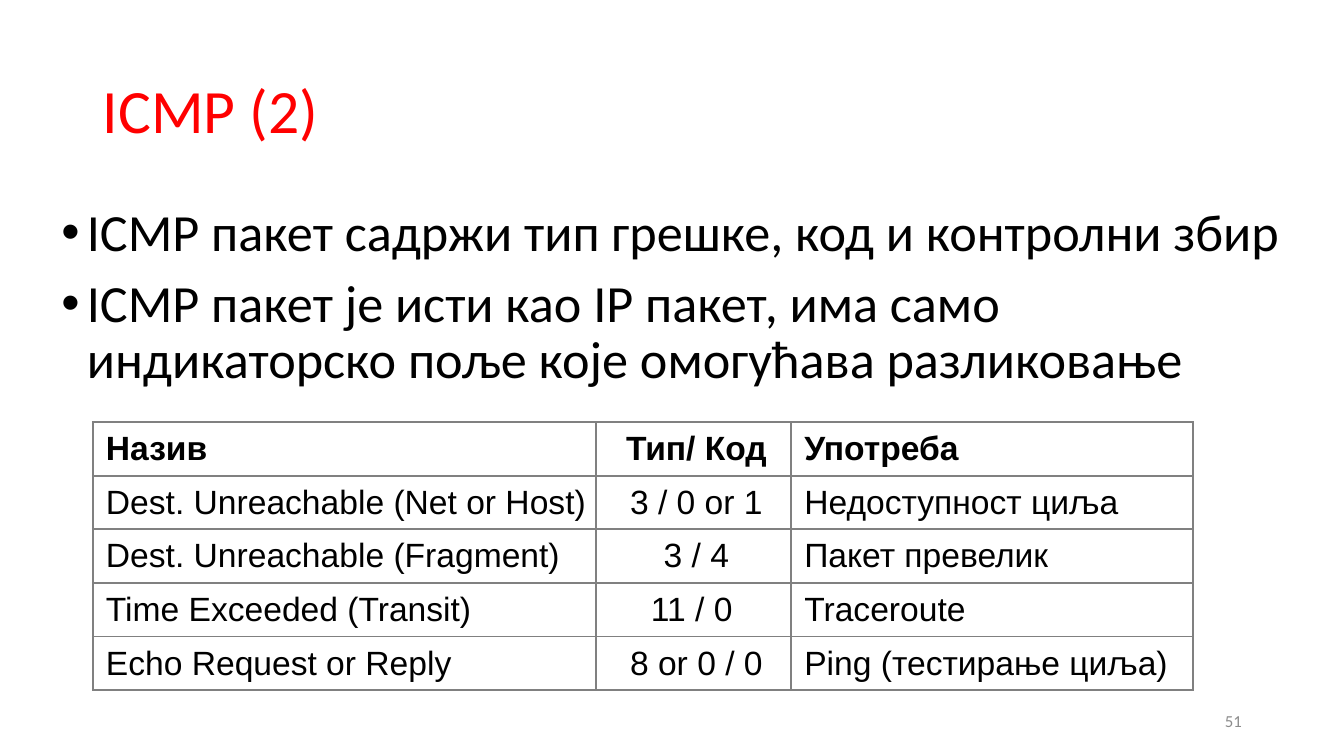
from lxml.etree import SubElement
from pptx import Presentation
from pptx.dml.color import RGBColor
from pptx.enum.text import MSO_ANCHOR, PP_ALIGN
from pptx.oxml.ns import qn
from pptx.util import Cm, Pt

COLORS = {"title": "FF0000", "text": "000000", "number": "8C8C8C", "border": "808080"}


class SlideBuilder:
    """Holds the text style and the current slide, and adds its elements."""

    heading_font = "Calibri"
    table_font = "Arial"
    border_width = Pt(1.5)
    cell_format = {
        "vertical_anchor": MSO_ANCHOR.MIDDLE,
        "margin_left": Cm(0.33),
        "margin_right": Cm(0.18),
        "margin_top": Cm(0.1),
        "margin_bottom": Cm(0.1),
    }

    def __init__(self, prs):
        self.slide = prs.slides.add_slide(prs.slide_layouts[6])

    def apply(self, target, values):
        for name, value in values.items():
            setattr(target, name, value)

    def add_text(self, p, text, size, color, font, bold=False, **layout):
        self.apply(p, layout)
        r = p.add_run()
        r.text = text
        self.apply(r.font, {"name": font, "size": Pt(size), "bold": bold})
        r.font.color.rgb = RGBColor.from_string(COLORS[color])

    def text_box(self, box, lines, size, color, anchor=MSO_ANCHOR.MIDDLE, bullet=None, **layout):
        tf = self.slide.shapes.add_textbox(*map(Cm, box)).text_frame
        self.apply(tf, {"word_wrap": True, "vertical_anchor": anchor})
        for i, line in enumerate(lines):
            p = tf.add_paragraph() if i else tf.paragraphs[0]
            self.add_text(p, line, size, color, self.heading_font, **layout)
            if bullet:
                self.bullet(p, bullet)

    def bullet(self, p, char):
        pPr = p._p.get_or_add_pPr()
        indent = Cm(0.64)
        pPr.set("marL", str(indent))
        pPr.set("indent", str(-indent))
        SubElement(pPr, qn("a:buFont"), typeface="Arial")
        SubElement(pPr, qn("a:buChar"), char=char)

    def borders(self, cell):
        tcPr = cell._tc.get_or_add_tcPr()
        for side in ("lnL", "lnR", "lnT", "lnB"):
            ln = SubElement(tcPr, qn(f"a:{side}"), w=str(self.border_width))
            fill = SubElement(ln, qn("a:solidFill"))
            SubElement(fill, qn("a:srgbClr"), val=COLORS["border"])

    def table(self, left, top, widths, row_height, rows, aligns, size):
        box = map(Cm, (left, top, sum(widths), row_height * len(rows)))
        table = self.slide.shapes.add_table(len(rows), len(widths), *box).table
        self.apply(table, {"first_row": False, "horz_banding": False})
        for column, width in zip(table.columns, widths):
            column.width = Cm(width)
        for i, row in enumerate(rows):
            table.rows[i].height = Cm(row_height)
            for j, text in enumerate(row):
                cell = table.cell(i, j)
                self.apply(cell, self.cell_format)
                self.borders(cell)
                cell.fill.background()
                self.add_text(cell.text_frame.paragraphs[0], text, size, "text",
                              self.table_font, bold=i == 0, alignment=aligns[j])


def main():
    prs = Presentation()
    prs.slide_width, prs.slide_height = Cm(33.87), Cm(19.05)
    s = SlideBuilder(prs)
    s.text_box((2.34, 1.02, 29.21, 3.68), ["ICMP (2)"], 44, "title", line_spacing=0.9)
    s.text_box(
        (1.3, 5.08, 31.55, 12.09),
        [
            "ICMP пакет садржи тип грешке, код и контролни збир",
            "ICMP пакет је исти као IP пакет, има само индикаторско поље које омогућава разликовање",
        ],
        37.3, "text", anchor=MSO_ANCHOR.TOP, bullet="•", line_spacing=0.9, space_before=Pt(10),
    )
    s.text_box((23.93, 17.65, 7.62, 1.02), ["51"], 12, "number", alignment=PP_ALIGN.RIGHT)
    messages = [
        ("Назив", "Тип/ Код", "Употреба"),
        ("Dest. Unreachable (Net or Host)", "3 / 0 or 1", "Недоступност циља"),
        ("Dest. Unreachable (Fragment)", "3 / 4", "Пакет превелик"),
        ("Time Exceeded (Transit)", "11 / 0 ", "Traceroute"),
        ("Echo Request or Reply", "8 or 0 / 0", "Ping (тестирање циља)"),
    ]
    aligns = (PP_ALIGN.LEFT, PP_ALIGN.CENTER, PP_ALIGN.LEFT)
    s.table(2.34, 10.64, (12.67, 4.93, 10.13), 1.35, messages, aligns, 24)
    prs.save("out.pptx")


if __name__ == "__main__":
    main()
